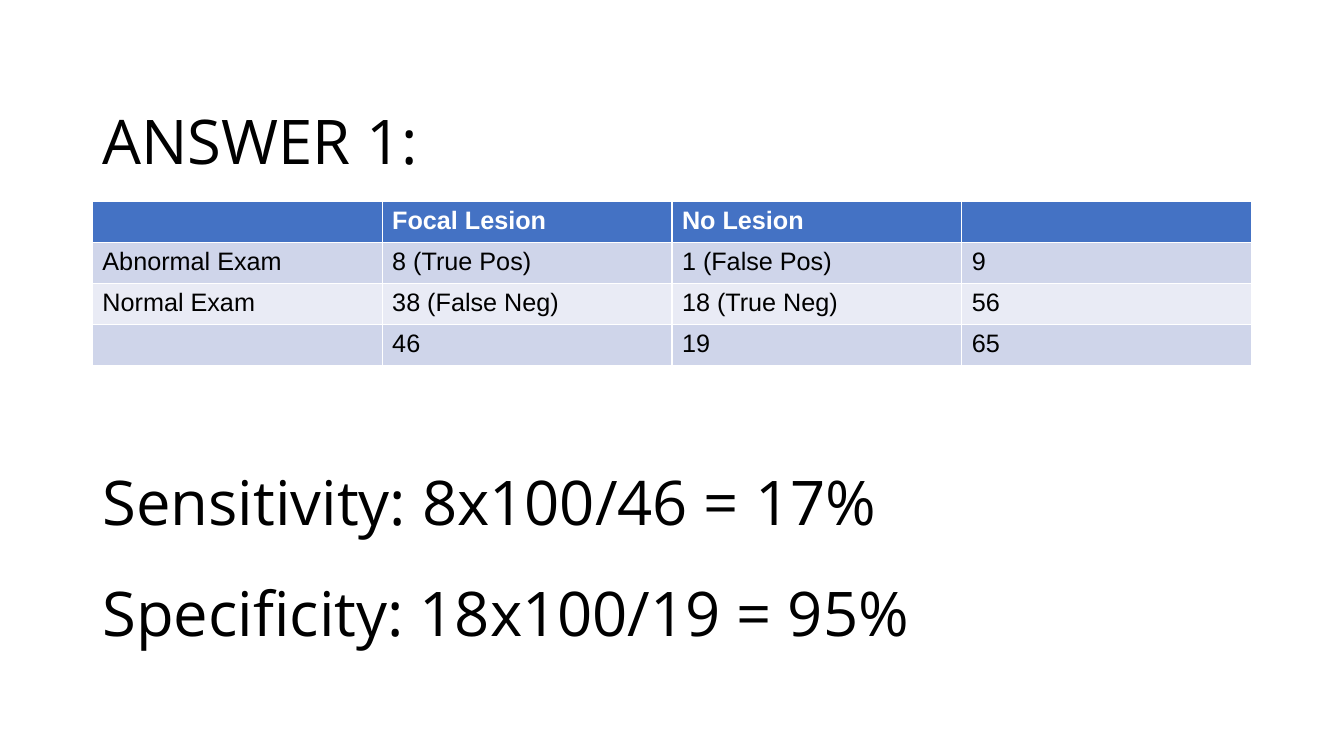
from pptx import Presentation
from pptx.util import Pt
from pptx.dml.color import RGBColor
from pptx.enum import text

HEAD = "ANSWER 1:"
RATES = ["Sensitivity: 8x100/46 = 17%", "Specificity: 18x100/19 = 95%"]
ROWS = [
    ["", "Focal Lesion", "No Lesion", ""],
    ["Abnormal Exam", "8 (True Pos)", "1 (False Pos)", "9"],
    ["Normal Exam", "38 (False Neg)", "18 (True Neg)", "56"],
    ["", "46", "19", "65"],
]
COLORS = {"head": "4472C4", "odd": "CFD5EA", "even": "E9EBF5",
          "ink": "000000", "white": "FFFFFF"}
LEFT, WIDTH = 66, 828
ROW = 29.2


def color(name):
    return RGBColor.from_string(COLORS[name])


def style(par, face, size, ink, bold=False):
    for run in par.runs:
        run.font.name = face
        run.font.size = Pt(size)
        run.font.bold = bold
        run.font.color.rgb = color(ink)


def write(shape, words, space):
    frame = shape.text_frame
    frame.word_wrap = True
    frame.auto_size = text.MSO_AUTO_SIZE.NONE
    frame.vertical_anchor = text.MSO_ANCHOR.MIDDLE
    par = frame.paragraphs[0]
    par.text = words
    par.alignment = text.PP_ALIGN.LEFT
    par.line_spacing = space
    style(par, "Open Sans", 44, "ink")


deck = Presentation()
deck.slide_width, deck.slide_height = Pt(960), Pt(540)
slide = deck.slides.add_slide(deck.slide_layouts[5])

title = slide.shapes.title
title.left, title.top, title.width, title.height = Pt(LEFT), Pt(285), Pt(WIDTH), Pt(199)
write(title, "\v".join(RATES), 1.5)

table = slide.shapes.add_table(len(ROWS), len(ROWS[0]), Pt(LEFT), Pt(144),
                               Pt(WIDTH), Pt(ROW * len(ROWS))).table
for r, row in enumerate(ROWS):
    table.rows[r].height = Pt(ROW)
    fill = "head" if r == 0 else "odd" if r % 2 else "even"
    for c, words in enumerate(row):
        cell = table.cell(r, c)
        cell.text = words
        cell.fill.solid()
        cell.fill.fore_color.rgb = color(fill)
        style(cell.text_frame.paragraphs[0], "Arial", 18,
              "ink" if r else "white", r == 0)

box = slide.shapes.add_textbox(Pt(LEFT), Pt(74), Pt(WIDTH), Pt(59))
write(box, HEAD, 0.9)

deck.save("out.pptx")
